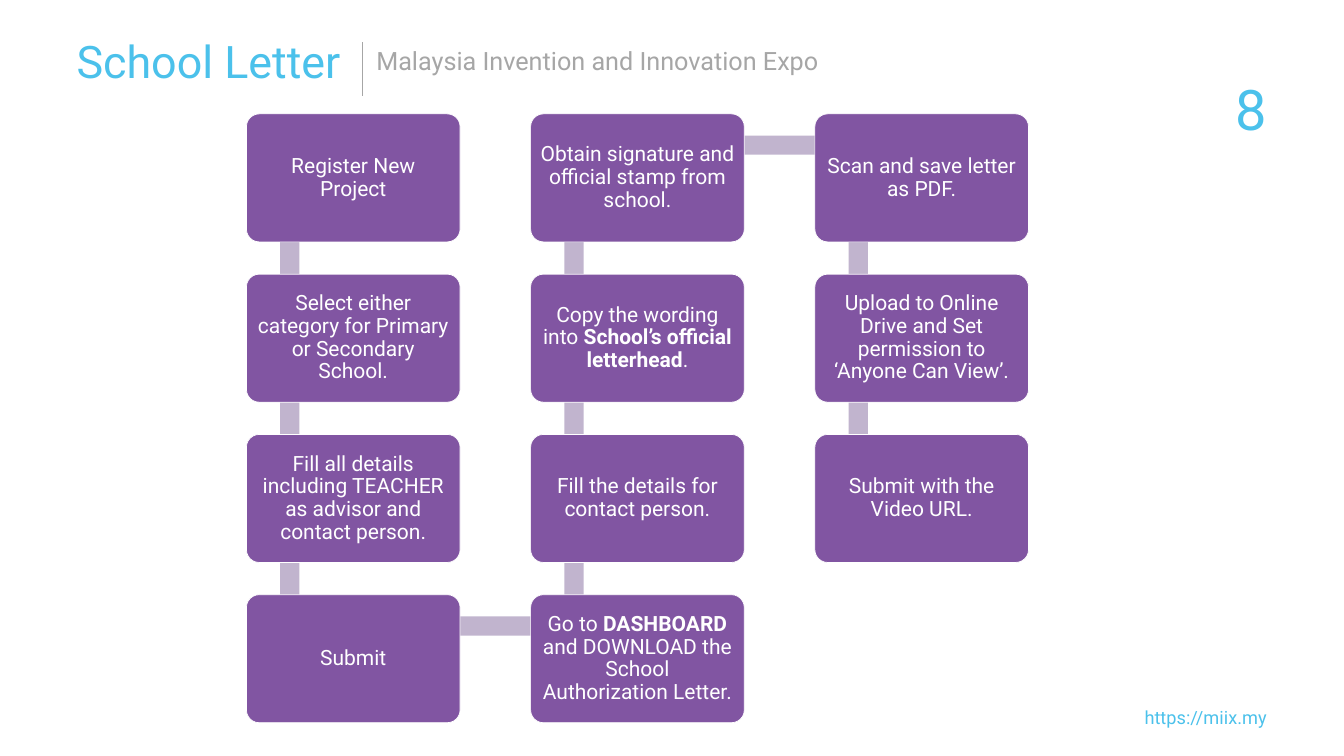
import pptx
import pptx.util
import pptx.dml.color
import pptx.enum.shapes
import pptx.enum.text
import pptx.oxml.ns
import lxml.etree

Inches = pptx.util.Inches
Pt = pptx.util.Pt
SHAPE = pptx.enum.shapes.MSO_SHAPE
ALIGN = pptx.enum.text.PP_ALIGN
ANCHOR = pptx.enum.text.MSO_ANCHOR

COLORS = {"sky": "4BC1EB", "gray": "A6A6A6", "box": "8155A2",
          "link": "C1B4CE", "white": "FFFFFF"}
FONT = "Roboto"

LEFT, TOP = 4.89, 2.26
STEP_X, STEP_Y = 5.64, 3.18
BOX_W, BOX_H = 4.24, 2.54
BAR = 0.38
ROWS = 4

# Each step is a list of (text, bold) runs
STEPS = [
    [("Register New Project", False)],
    [("Select either category for Primary or Secondary School.", False)],
    [("Fill all details including TEACHER as advisor and contact person.", False)],
    [("Submit", False)],
    [("Go to ", False), ("DASHBOARD", True),
     (" and DOWNLOAD the School Authorization Letter.", False)],
    [("Fill the details for contact person.", False)],
    [("Copy the wording into ", False), ("School’s official letterhead", True),
     (".", False)],
    [("Obtain signature and official stamp from school.", False)],
    [("Scan and save letter as PDF.", False)],
    [("Upload to Online Drive and Set permission to ‘Anyone Can View’.", False)],
    [("Submit with the Video URL.", False)],
]


def rgb(name):
    return pptx.dml.color.RGBColor.from_string(COLORS[name])


def write(shape, runs, size, color, align=ALIGN.LEFT, anchor=ANCHOR.MIDDLE,
          inset=(0, 0), spacing=None):
    """Fill a shape with one paragraph; inset is (sides, top and bottom)."""
    frame = shape.text_frame
    frame.word_wrap = True
    frame.vertical_anchor = anchor
    frame.margin_left = frame.margin_right = Inches(inset[0])
    frame.margin_top = frame.margin_bottom = Inches(inset[1])
    para = frame.paragraphs[0]
    para.alignment = align
    para.line_spacing = spacing
    for text, bold in runs:
        run = para.add_run()
        run.text = text
        run.font.name = FONT
        run.font.size = Pt(size)
        run.font.bold = bold
        run.font.color.rgb = rgb(color)


def add_label(slide, text, left, top, width, height, **style):
    box = slide.shapes.add_textbox(Inches(left), Inches(top),
                                   Inches(width), Inches(height))
    write(box, [(text, False)], **style)


def add_block(slide, kind, left, top, width, height, fill):
    shape = slide.shapes.add_shape(kind, Inches(left), Inches(top),
                                   Inches(width), Inches(height))
    shape.shadow.inherit = False
    shape.fill.solid()
    shape.fill.fore_color.rgb = rgb(fill)
    shape.line.fill.background()
    return shape


def add_rule(slide, x, top, bottom):
    rule = slide.shapes.add_connector(
        pptx.enum.shapes.MSO_CONNECTOR.STRAIGHT,
        Inches(x), Inches(top), Inches(x), Inches(bottom))
    rule.line.color.rgb = rgb("gray")
    rule.line.width = Pt(2.25)
    lxml.etree.SubElement(rule._element.spPr, pptx.oxml.ns.qn("a:effectLst"))


def place(index):
    """Left and top of a step: down the first column, up the next, and so on."""
    col, row = divmod(index, ROWS)
    if col % 2:
        row = ROWS - 1 - row
    return LEFT + col * STEP_X, TOP + row * STEP_Y


def add_link(slide, index):
    """Bar from a step to the one after it."""
    left, top = place(index)
    next_left, next_top = place(index + 1)
    if next_left > left:
        add_block(slide, SHAPE.RECTANGLE, left + 0.86, top + 0.43,
                  STEP_X, BAR, "link")
        return
    mid_x, mid_y = left + 0.86, min(top, next_top) + 2.2
    bar = add_block(slide, SHAPE.RECTANGLE, mid_x - STEP_Y / 2,
                    mid_y - BAR / 2, STEP_Y, BAR, "link")
    bar.rotation = 90 if next_top > top else 270


def add_step(slide, index, runs):
    box = add_block(slide, SHAPE.ROUNDED_RECTANGLE, *place(index),
                    BOX_W, BOX_H, "box")
    box.adjustments[0] = 0.1
    box.line.color.rgb = rgb("white")
    box.line.width = Pt(1)
    write(box, runs, size=30, color="white", align=ALIGN.CENTER,
          inset=(0.12, 0.12), spacing=0.9)


def main():
    deck = pptx.Presentation()
    deck.slide_width = Inches(26.67)
    deck.slide_height = Inches(15)
    slide = deck.slides.add_slide(deck.slide_layouts[6])

    add_label(slide, "https://miix.my", 21.56, 14.01, 3.58, 0.44, size=26,
              color="sky", align=ALIGN.RIGHT, anchor=ANCHOR.TOP)
    add_label(slide, "8", 22.06, 1.75, 3.08, 0.8, size=80, color="sky",
              align=ALIGN.RIGHT)
    add_label(slide, "School Letter", 1.52, 0.66, 5.52, 1.08, size=64,
              color="sky")
    add_label(slide, "Malaysia Invention and Innovation Expo",
              7.37, 0.85, 9.37, 0.71, size=36, color="gray", inset=(0.1, 0.05))
    add_rule(slide, 7.19, 0.84, 1.91)

    for index, runs in enumerate(STEPS):
        if index + 1 < len(STEPS):
            add_link(slide, index)
        add_step(slide, index, runs)

    deck.save("out.pptx")


if __name__ == "__main__":
    main()
